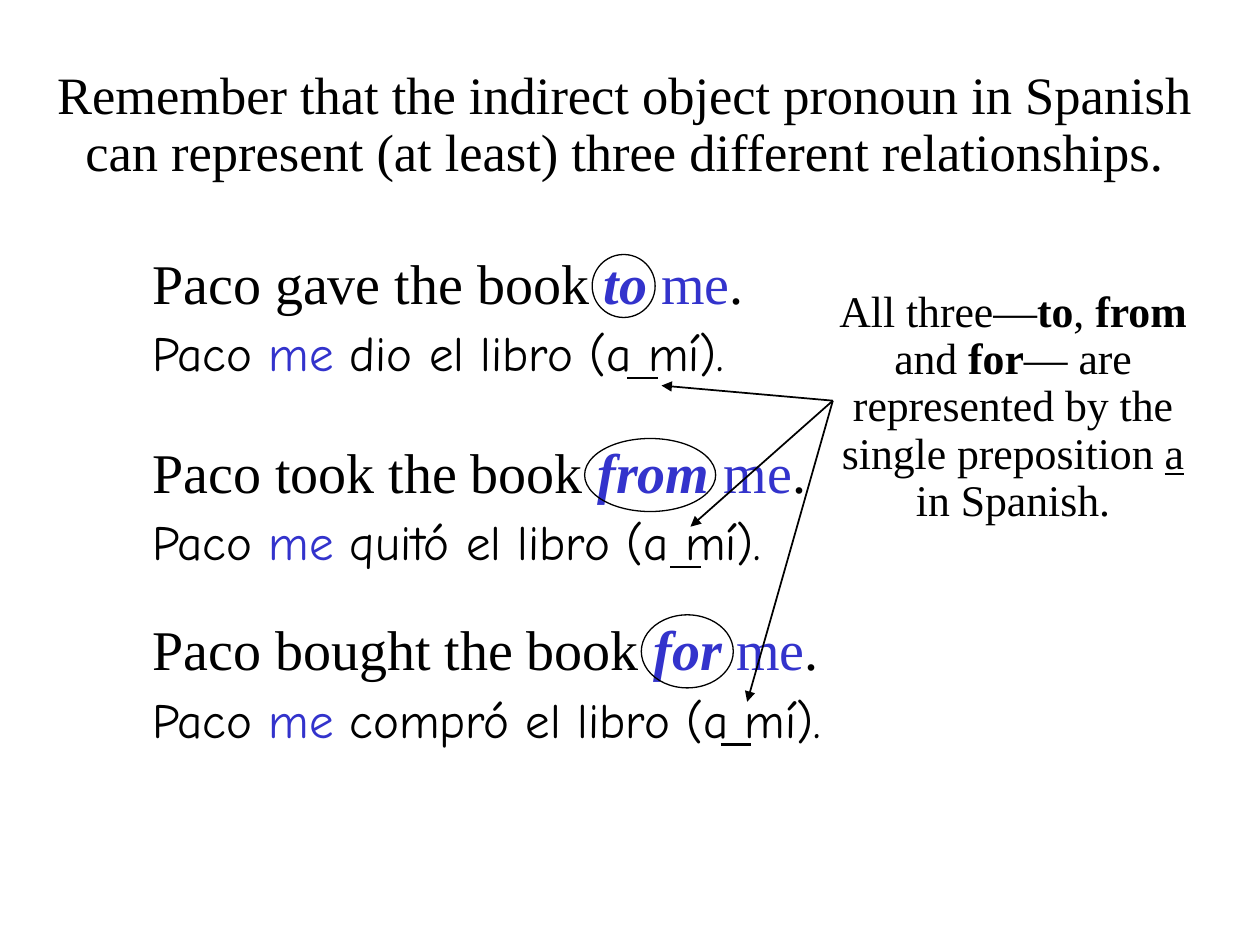
from pptx import Presentation
from pptx.dml.color import RGBColor
from pptx.enum import shapes, text
from pptx.oxml.ns import qn
from pptx.util import Inches, Pt
from lxml import etree

COLORS = {"ink": "000000", "accent": "3333CC"}
SERIF, HAND = "Times New Roman", "Comic Neue"


def add_text(slide, box, runs, font, size, before, centered=False, spacing=None):
    """Add a text box of (wording, styles) runs, where styles is a set of words."""
    frame = slide.shapes.add_textbox(*map(Inches, box)).text_frame
    frame.word_wrap = True
    paragraph = frame.paragraphs[0]
    paragraph.space_before = Pt(before)
    paragraph.font.name, paragraph.font.size = font, Pt(size)
    paragraph.font.color.rgb = RGBColor.from_string(COLORS["ink"])
    if centered:
        paragraph.alignment = text.PP_ALIGN.CENTER
    if spacing:
        paragraph.line_spacing = spacing
    for wording, styles in runs:
        run = paragraph.add_run()
        run.text = wording
        run.font.name, run.font.size = font, Pt(size)
        color = COLORS["accent" if "accent" in styles else "ink"]
        run.font.color.rgb = RGBColor.from_string(color)
        for style in styles - {"accent"}:
            setattr(run.font, style, True)


def add_line(slide, start, end, width, arrow=False):
    """Draw a straight line, with an arrowhead at its end if asked."""
    line = slide.shapes.add_connector(
        shapes.MSO_CONNECTOR.STRAIGHT, *map(Inches, start + end))
    line.line.color.rgb = RGBColor.from_string(COLORS["ink"])
    line.line.width = Pt(width)
    if arrow:
        etree.SubElement(line.line._get_or_add_ln(), qn("a:tailEnd"), type="triangle")
    etree.SubElement(line._element.spPr, qn("a:effectLst"))


def add_ring(slide, box):
    """Circle a preposition with an unfilled ellipse."""
    ring = slide.shapes.add_shape(shapes.MSO_SHAPE.OVAL, *map(Inches, box))
    ring.shadow.inherit = False
    ring.fill.background()
    ring.line.color.rgb = RGBColor.from_string(COLORS["ink"])
    ring.line.width = Pt(0.75)


def add_heading(slide, box):
    """Place the opening statement."""
    statement = ("Remember that the indirect object pronoun in Spanish can "
                 "represent (at least) three different relationships.")
    add_text(slide, box, [(statement, set())], SERIF, 30, 3.6, True, 0.9)


def add_example(slide, box, verb, preposition, spanish, ring, underline):
    """Place an English sentence over its Spanish one, with ring and underline."""
    left, top, width, height = box
    english = [(f"Paco {verb} the book ", set()),
               (preposition, {"accent", "bold", "italic"}),
               (" me", {"accent"}), (".", set())]
    translation = [("Paco ", set()), ("me", {"accent"}),
                   (f" {spanish} el libro (a mí).", set())]
    add_text(slide, box, english, SERIF, 32, 3.6)
    add_text(slide, (left, top + 0.59, width, height), translation, HAND, 28, 3.6)
    ring_x, ring_y, ring_width, ring_height = ring
    add_ring(slide, (left + ring_x, top + ring_y, ring_width, ring_height))
    line_x, line_y = left + underline, top + 1.08
    add_line(slide, (line_x, line_y), (line_x + 0.24, line_y), 1.53)


def add_note(slide, box, targets):
    """Place the side note and its arrows to the Spanish prepositions."""
    left, top, _, _ = box
    note = [("All three—", set()), ("to", {"bold"}), (", ", set()),
            ("from", {"bold"}), (" and ", set()), ("for", {"bold"}),
            ("— are represented by the single preposition ", set()),
            ("a", {"underline"}), (" in Spanish.", set())]
    add_text(slide, box, note, SERIF, 25, 9, True, 0.9)
    for target in targets:
        add_line(slide, (left + 0.11, top + 0.93), target, 1, True)


def main():
    """Build and save the slide."""
    deck = Presentation()
    deck.slide_width, deck.slide_height = Inches(10), Inches(7.5)
    slide = deck.slides.add_slide(deck.slide_layouts[6])
    add_heading(slide, (0.25, 0.5, 9.42, 1.17))
    examples = [
        (1.92, "gave", "to", "dio", (3.59, 0.1, 0.5, 0.5), 3.87),
        (3.42, "took", "from", "quitó", (3.53, 0.06, 1.04, 0.58), 4.21),
        (4.83, "bought", "for", "compró", (3.98, 0.05, 0.73, 0.58), 4.61),
    ]
    for top, *parts in examples:
        add_example(slide, (1.11, top, 6.5, 0.75), *parts)
    add_note(slide, (6.5, 2.25, 3.08, 1.98),
             [(5.25, 3.06), (5.48, 4.18), (5.93, 5.57)])
    deck.save("out.pptx")


if __name__ == "__main__":
    main()
